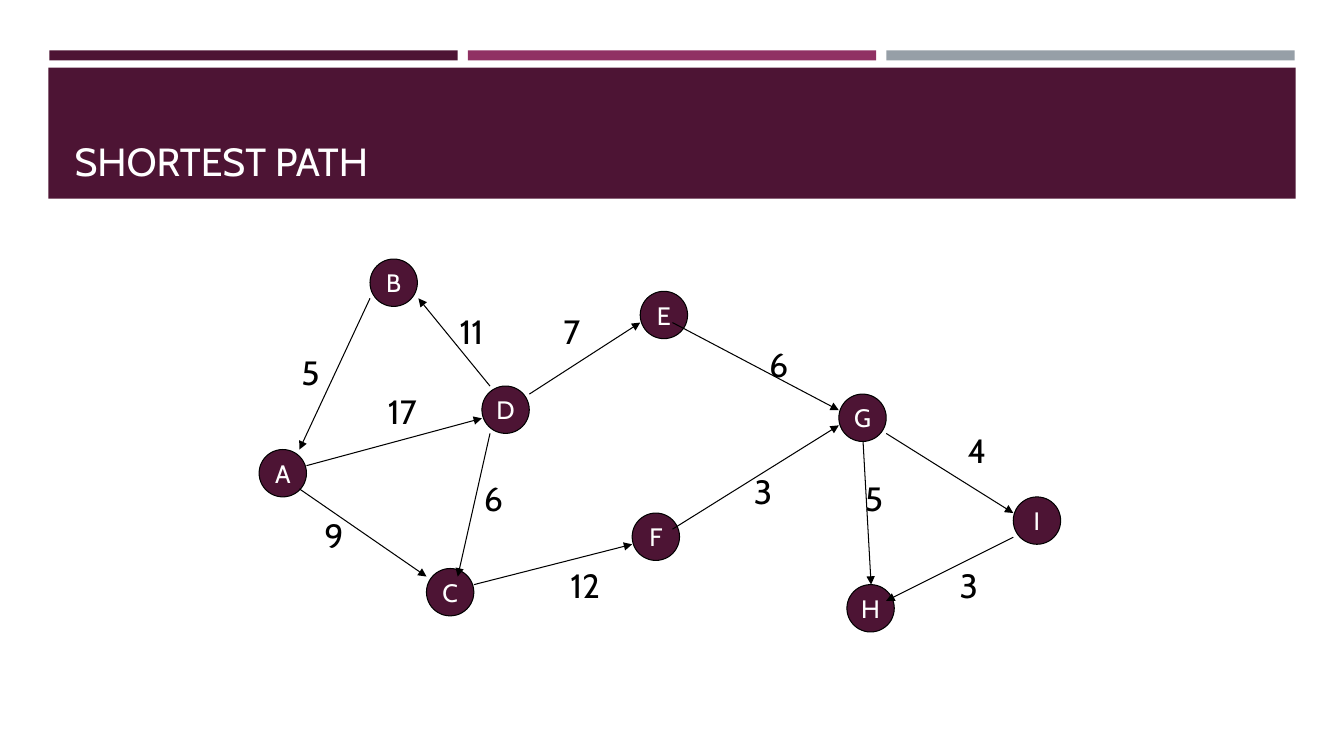
"""Build a slide showing a weighted directed graph for shortest path."""
from lxml import etree
from pptx import Presentation
from pptx.dml.color import RGBColor
from pptx.enum.shapes import MSO_CONNECTOR, MSO_SHAPE
from pptx.enum.text import MSO_ANCHOR, MSO_AUTO_SIZE, PP_ALIGN
from pptx.oxml.ns import qn
from pptx.util import Inches, Pt

RECT, OVAL = MSO_SHAPE.RECTANGLE, MSO_SHAPE.OVAL
LINE = MSO_CONNECTOR.STRAIGHT
MIDDLE, BOTTOM = MSO_ANCHOR.MIDDLE, MSO_ANCHOR.BOTTOM
LEFT, CENTER = PP_ALIGN.LEFT, PP_ALIGN.CENTER
FIXED, GROW = MSO_AUTO_SIZE.NONE, MSO_AUTO_SIZE.SHAPE_TO_FIT_TEXT
PLUM, ROSE, GRAY = "4D1434", "903163", "969FA7"
WHITE, BLACK = "FFFFFF", "000000"
SIDE = 0.47


def paint(part, tone):
    """Give a fill, line or font a solid colour."""
    if hasattr(part, "solid"):
        part.solid()
        part.fore_color.rgb = RGBColor.from_string(tone)
    else:
        part.color.rgb = RGBColor.from_string(tone)


def write(shape, text, size, tone, align, frame):
    """Put one line of text in a shape with the given frame format."""
    body = shape.text_frame
    body.text = text
    for name, value in frame.items():
        setattr(body, name, value)
    para = body.paragraphs[0]
    para.alignment = align
    font = para.runs[0].font
    for name, value in {"size": Pt(size), "name": "Cabin", "bold": False}.items():
        setattr(font, name, value)
    paint(font, tone)


TITLE = {"vertical_anchor": BOTTOM, "word_wrap": True, "auto_size": FIXED}
LABEL = {"word_wrap": False, "auto_size": GROW}
NODE = {"vertical_anchor": MIDDLE, "word_wrap": False, "auto_size": FIXED}

deck = Presentation()
deck.slide_width, deck.slide_height = Inches(13.33), Inches(7.5)
slide = deck.slides.add_slide(deck.slide_layouts[5])
shapes = slide.shapes

bands = [(0.49 + 4.15 * i, 0.5, 4.05, 0.1, tone)
         for i, tone in enumerate((PLUM, ROSE, GRAY))]
bands.append((0.48, 0.67, 12.37, 1.3, PLUM))
for *box, tone in bands:
    band = shapes.add_shape(RECT, *map(Inches, box))
    band.shadow.inherit = False
    paint(band.fill, tone)
    band.line.fill.background()

title = shapes.title
place = {"left": 0.64, "top": 0.77, "width": 12.06, "height": 1.11}
for name, value in place.items():
    setattr(title, name, Inches(value))
write(title, "SHORTEST PATH", 28, WHITE, LEFT, TITLE)
shapes.element.append(title.element)

edges = [
    ("17", (3.75, 3.83), (3.04, 4.62), (4.78, 4.15)),
    ("11", (4.46, 3.04), (4.86, 3.83), (4.15, 2.96)),
    ("5", (2.89, 3.44), (3.67, 2.96), (2.97, 4.46)),
    ("9", (3.12, 5.06), (2.97, 4.85), (4.23, 5.72)),
    ("6", (4.7, 4.69), (4.86, 4.3), (4.54, 5.72)),
    ("7", (5.49, 3.04), (5.25, 3.91), (6.35, 3.2)),
    ("6", (7.53, 3.36), (6.67, 3.2), (8.32, 4.07)),
    ("3", (7.38, 4.62), (6.67, 5.25), (8.32, 4.22)),
    ("4", (9.5, 4.22), (8.79, 4.3), (10.05, 5.09)),
    ("5", (8.48, 4.69), (8.56, 4.38), (8.64, 5.8)),
    ("3", (9.42, 5.56), (10.05, 5.33), (8.79, 5.96)),
    ("12", (5.56, 5.56), (4.7, 5.8), (6.27, 5.4)),
]
for cost, spot, start, end in edges:
    wide = 0.2 + 0.17 * len(cost)
    label = shapes.add_textbox(*map(Inches, (*spot, wide, 0.5)))
    write(label, cost, 24, BLACK, LEFT, LABEL)

nodes = {
    "B": (3.67, 2.57), "I": (10.05, 4.93), "A": (2.57, 4.46),
    "C": (4.23, 5.64), "D": (4.78, 3.83), "H": (8.4, 5.8),
    "G": (8.32, 3.91), "F": (6.27, 5.09), "E": (6.35, 2.89),
}
for name, spot in nodes.items():
    node = shapes.add_shape(OVAL, *map(Inches, (*spot, SIDE, SIDE)))
    node.shadow.inherit = False
    paint(node.fill, PLUM)
    paint(node.line, BLACK)
    node.line.width = Pt(0.75)
    write(node, name, 18, WHITE, CENTER, NODE)

for cost, spot, start, end in edges:
    arrow = shapes.add_connector(LINE, *map(Inches, start + end))
    paint(arrow.line, BLACK)
    arrow.line.width = Pt(0.75)
    props = arrow.element.spPr
    etree.SubElement(props.find(qn("a:ln")), qn("a:tailEnd"), type="triangle")
    etree.SubElement(props, qn("a:effectLst"))

deck.save("out.pptx")
